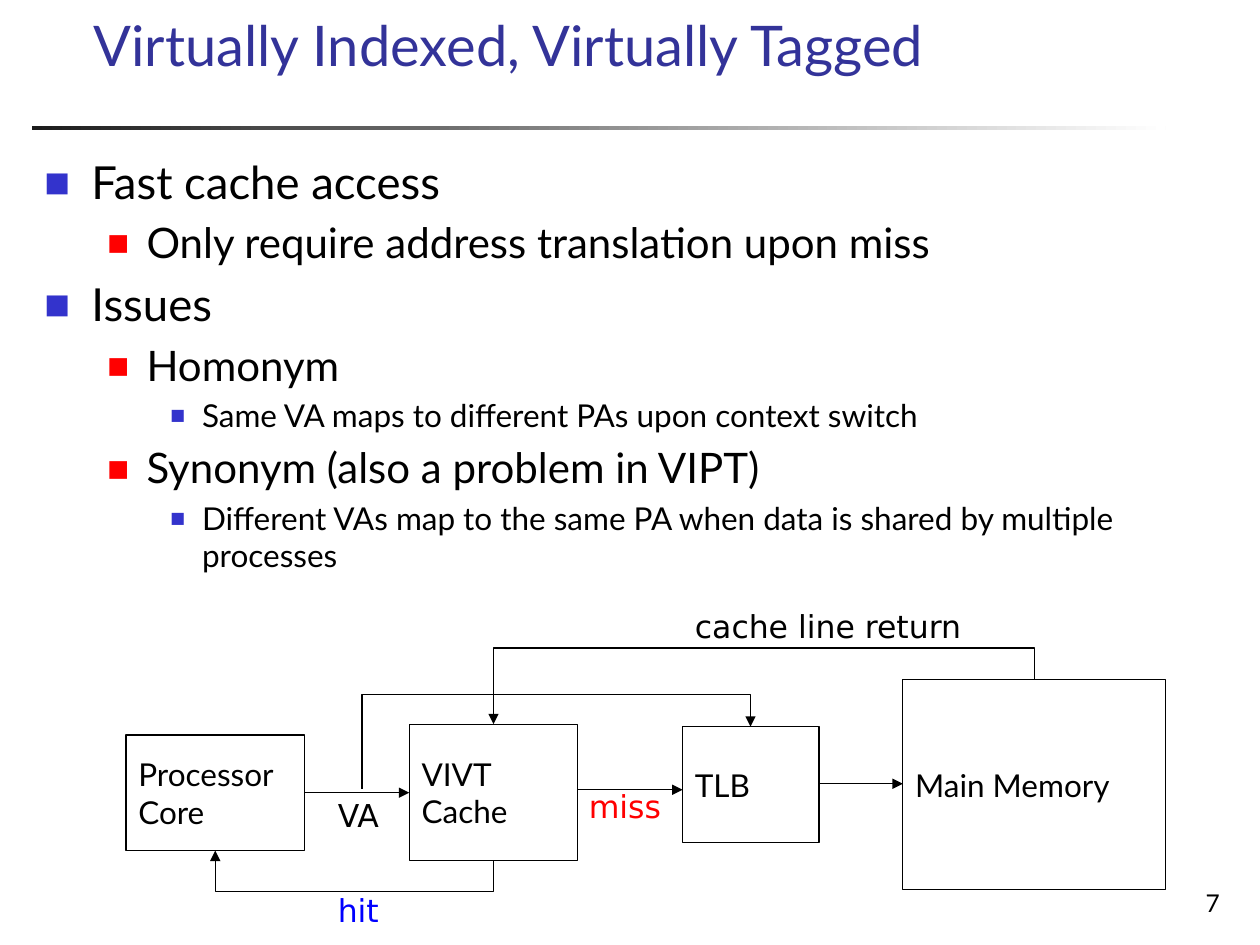
from dataclasses import dataclass
from lxml.etree import SubElement
from pptx import Presentation
from pptx.dml.color import RGBColor
from pptx.enum.shapes import MSO_CONNECTOR, MSO_SHAPE
from pptx.enum.text import MSO_ANCHOR, MSO_AUTO_SIZE, PP_ALIGN
from pptx.oxml.ns import qn
from pptx.util import Cm, Pt


@dataclass(frozen=True)
class Theme:
    """Colours, fonts and type sizes of the slide."""
    ink: str = "000000"
    paper: str = "FFFFFF"
    title: str = "333399"
    rule: str = "1C1C1C"
    mark: str = "3333CC"
    red: str = "FF0000"
    blue: str = "0000FF"
    sans: str = "Lato"
    label: str = "DejaVu Sans"
    head: int = 32
    text: int = 18
    page: int = 14
    line: float = 0.75


THEME = Theme()

LEVELS = [
    (26, 0.95, 0.95, THEME.mark, 60),
    (24, 2.06, 0.79, THEME.red, 55),
    (18, 3.18, 0.64, THEME.mark, 50),
]

POINTS = [
    (0, "Fast cache access"),
    (1, "Only require address translation upon miss"),
    (0, "Issues"),
    (1, "Homonym"),
    (2, "Same VA maps to different PAs upon context switch"),
    (1, "Synonym (also a problem in VIPT)"),
    (2, "Different VAs map to the same PA when data is shared by multiple processes"),
]

BOXES = [
    (["TLB"], 13.76, 14.65, 2.75, 2.33),
    (["Processor", "Core"], 2.54, 14.82, 3.6, 2.33),
    (["VIVT", "Cache"], 8.25, 14.6, 3.4, 2.75),
    (["Main Memory"], 18.2, 13.7, 5.3, 4.23),
]

ARROWS = [(11.65, 13.76, 15.92), (6.14, 8.25, 15.98), (16.51, 18.2, 15.8)]

BENDS = [
    ((9.95, 17.35), (4.34, 17.15), 17.98),
    ((7.3, 15.9), (15.13, 14.65), 14.0),
    ((20.85, 13.7), (9.95, 14.6), 13.06),
]

LABELS = [
    ("VA", 6.56, 15.93, 1.5, THEME.ink),
    ("hit", 6.56, 17.83, 1.48, THEME.blue),
    ("miss", 11.62, 15.74, 2.16, THEME.red),
    ("cache line return", 13.76, 12.11, 6.55, THEME.ink),
]


def rgb(code):
    """Turn a hex code into a colour."""
    return RGBColor.from_string(code)


def place(shape, *at):
    """Set left, top, width and height in centimetres."""
    shape.left, shape.top, shape.width, shape.height = map(Cm, at)


def write(para, text, size, color=THEME.ink, font=THEME.sans):
    """Add one formatted run to a paragraph."""
    run = para.add_run()
    run.text = text
    run.font.size = Pt(size)
    run.font.name = font
    run.font.color.rgb = rgb(color)


def bullet(para, level):
    """Give a paragraph the indent, spacing and bullet of its level."""
    size, left, hang, color, scale = LEVELS[level]
    para.level = level
    props = para._p.get_or_add_pPr()
    props.set("marL", str(Cm(left)))
    props.set("indent", str(-Cm(hang)))
    space = SubElement(props, qn("a:spcBef"))
    SubElement(space, qn("a:spcPct"), val="20000")
    tint = SubElement(props, qn("a:buClr"))
    SubElement(tint, qn("a:srgbClr"), val=color)
    SubElement(props, qn("a:buSzPct"), val=str(scale * 1000))
    SubElement(props, qn("a:buFont"), typeface=THEME.sans)
    SubElement(props, qn("a:buChar"), char="■")
    return size


def add_title(slide, text):
    """Fill the title placeholder."""
    shape = slide.shapes.title
    place(shape, 1.63, 0.38, 22.5, 1.32)
    frame = shape.text_frame
    frame.auto_size = MSO_AUTO_SIZE.NONE
    frame.vertical_anchor = MSO_ANCHOR.BOTTOM
    para = frame.paragraphs[0]
    para.alignment = PP_ALIGN.LEFT
    write(para, text, THEME.head, THEME.title)


def add_list(slide, points):
    """Fill the body placeholder with the bulleted list."""
    shape = slide.placeholders[1]
    place(shape, 0.64, 2.97, 24.23, 14.07)
    frame = shape.text_frame
    frame.auto_size = MSO_AUTO_SIZE.NONE
    for i, (level, text) in enumerate(points):
        para = frame.add_paragraph() if i else frame.paragraphs[0]
        write(para, text, bullet(para, level))


def add_rule(slide):
    """Draw the fading rule below the title."""
    bar = slide.shapes.add_shape(
        MSO_SHAPE.RECTANGLE, *map(Cm, (0.64, 2.54, 22.86, 0.08)))
    bar.shadow.inherit = False
    bar.line.fill.background()
    bar.fill.gradient()
    bar.fill.gradient_angle = 0
    for stop, color in zip(bar.fill.gradient_stops, (THEME.rule, THEME.paper)):
        stop.color.rgb = rgb(color)


def add_box(slide, lines, *at):
    """Draw one outlined block of the diagram."""
    box = slide.shapes.add_shape(MSO_SHAPE.RECTANGLE, *map(Cm, at))
    box.shadow.inherit = False
    box.fill.solid()
    box.fill.fore_color.rgb = rgb(THEME.paper)
    box.line.color.rgb = rgb(THEME.ink)
    box.line.width = Pt(THEME.line)
    frame = box.text_frame
    frame.word_wrap = False
    frame.vertical_anchor = MSO_ANCHOR.MIDDLE
    for i, text in enumerate(lines):
        para = frame.add_paragraph() if i else frame.paragraphs[0]
        para.alignment = PP_ALIGN.LEFT
        write(para, text, THEME.text)


def add_label(slide, text, left, top, width, color):
    """Add a caption beside an arrow."""
    box = slide.shapes.add_textbox(*map(Cm, (left, top, width, 1.02)))
    frame = box.text_frame
    frame.word_wrap = False
    frame.auto_size = MSO_AUTO_SIZE.SHAPE_TO_FIT_TEXT
    write(frame.paragraphs[0], text, THEME.text, color, THEME.label)


def add_page(slide, text):
    """Add the page number."""
    box = slide.shapes.add_textbox(*map(Cm, (19.56, 17.35, 5.28, 1.27)))
    frame = box.text_frame
    frame.word_wrap = True
    frame.vertical_anchor = MSO_ANCHOR.BOTTOM
    para = frame.paragraphs[0]
    para.alignment = PP_ALIGN.RIGHT
    write(para, text, THEME.page)


def add_arrow(slide, kind, *ends):
    """Draw a connector with an arrowhead at its end."""
    link = slide.shapes.add_connector(kind, *map(Cm, ends))
    link.line.color.rgb = rgb(THEME.ink)
    link.line.width = Pt(THEME.line)
    SubElement(link.line._get_or_add_ln(), qn("a:tailEnd"), type="triangle")
    SubElement(link._element.spPr, qn("a:effectLst"))
    return link


def add_bend(slide, start, end, turn):
    """Draw an elbow that leaves upright and runs level at the turn height."""
    (x1, y1), (x2, y2) = start, end
    dx, dy = (x2 - x1) / 2, (y2 - y1) / 2
    cx, cy = x1 + dx, y1 + dy
    link = add_arrow(slide, MSO_CONNECTOR.ELBOW,
                     cx + dy, cy - dx, cx - dy, cy + dx)
    link.rotation = 270
    ratio = round((turn - y1) / (y2 - y1) * 100000)
    guides = link._element.spPr.find(qn("a:prstGeom")).find(qn("a:avLst"))
    SubElement(guides, qn("a:gd"), name="adj1", fmla=f"val {ratio}")


def main():
    """Build and save the slide."""
    deck = Presentation()
    deck.slide_width, deck.slide_height = Cm(25.4), Cm(19.05)
    slide = deck.slides.add_slide(deck.slide_layouts[1])
    add_rule(slide)
    add_title(slide, "Virtually Indexed, Virtually Tagged")
    add_list(slide, POINTS)
    add_page(slide, "7")
    for lines, *at in BOXES:
        add_box(slide, lines, *at)
    for x1, x2, y in ARROWS:
        add_arrow(slide, MSO_CONNECTOR.STRAIGHT, x1, y, x2, y)
    for bend in BENDS:
        add_bend(slide, *bend)
    for label in LABELS:
        add_label(slide, *label)
    deck.save("out.pptx")


if __name__ == "__main__":
    main()
